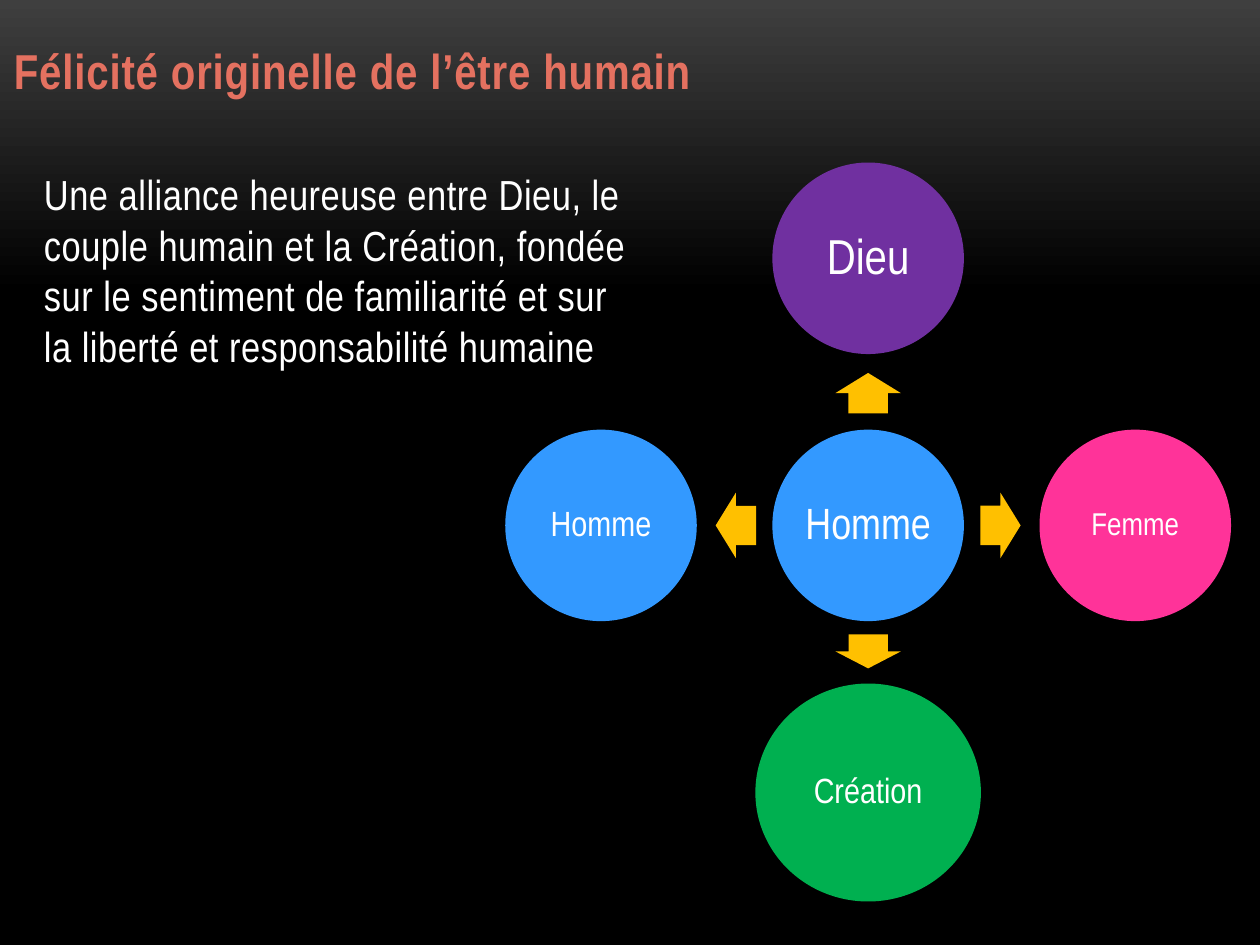
"""Build the slide on the original happiness of the human being."""
from pptx import Presentation
from pptx.dml.color import RGBColor
from pptx.enum.shapes import MSO_SHAPE as SHAPE
from pptx.enum.text import MSO_ANCHOR as ANCHOR, MSO_AUTO_SIZE as AUTO_SIZE, PP_ALIGN as ALIGN
from pptx.util import Inches, Pt

COLORS = {
    "top": "3F3F3F", "black": "000000", "white": "FFFFFF", "title": "E47160",
    "man": "3399FF", "woman": "FF3399", "god": "7030A0", "creation": "00B050",
    "arrow": "FFC000",
}
CENTER_X, CENTER_Y, PITCH = 6.89, 4.17, 2.12


def style_text(paragraph, size, color, spacing=0, bold=False):
    """Format every run of a paragraph."""
    for span in paragraph.runs:
        span.font.name = "Arial Narrow"
        span.font.size = Pt(size)
        span.font.bold = bold
        span.font.color.rgb = RGBColor.from_string(COLORS[color])
        if spacing:
            span._r.get_or_add_rPr().set("spc", str(spacing))


def add_centered(kind, x, y, width, height, color):
    """Add a plain filled shape around a centre point."""
    shape = page.shapes.add_shape(kind, Inches(x - width / 2), Inches(y - height / 2),
                                  Inches(width), Inches(height))
    shape.shadow.inherit = False
    shape.fill.solid()
    shape.fill.fore_color.rgb = RGBColor.from_string(COLORS[color])
    shape.line.fill.background()
    return shape


deck = Presentation()
deck.slide_width, deck.slide_height = Inches(10), Inches(7.5)
page = deck.slides.add_slide(deck.slide_layouts[5])

backdrop = page.background.fill
backdrop.gradient()
backdrop.gradient_angle = 270
for stop, (position, color) in zip(backdrop.gradient_stops, [(0, "top"), (0.31, "black")]):
    stop.position = position
    stop.color.rgb = RGBColor.from_string(COLORS[color])

title = page.shapes.title
title.left, title.top = Inches(0.01), Inches(-0.06)
title.width, title.height = Inches(9.99), Inches(0.9)
title.text_frame.text = "Félicité originelle de l’être humain"
title.text_frame.auto_size = AUTO_SIZE.NONE
title.text_frame.vertical_anchor = ANCHOR.BOTTOM
title.text_frame.paragraphs[0].alignment = ALIGN.LEFT
style_text(title.text_frame.paragraphs[0], 28, "title", 50, True)

box = page.shapes.add_textbox(Inches(0.25), Inches(1.33), Inches(4.92), Inches(1.92))
frame = box.text_frame
frame.word_wrap = True
frame.margin_top = Inches(0.01)
frame.text = ("Une alliance heureuse entre Dieu, le couple humain et la Création, "
              "fondée sur le sentiment de familiarité et sur la liberté et "
              "responsabilité humaine")
frame.paragraphs[0].space_after = Pt(6)
style_text(frame.paragraphs[0], 24, "white", 30)

circles = [
    ("Homme", 0, 0, 1.52, 1.52, 25, "man"),
    ("Dieu", 0, -1, 1.52, 1.52, 28, "god"),
    ("Femme", 1, 0, 1.52, 1.52, 18, "woman"),
    ("Création", 0, 1, 1.79, 1.73, 20, "creation"),
    ("Homme", -1, 0, 1.52, 1.52, 20, "man"),
]
for label, column, row, width, height, size, color in circles:
    circle = add_centered(SHAPE.OVAL, CENTER_X + column * PITCH, CENTER_Y + row * PITCH,
                          width, height, color)
    frame = circle.text_frame
    frame.margin_left = frame.margin_right = Inches(0.03)
    frame.margin_top = frame.margin_bottom = Inches(0.03)
    frame.word_wrap = False
    frame.vertical_anchor = ANCHOR.MIDDLE
    frame.text = label
    frame.paragraphs[0].alignment = ALIGN.CENTER
    frame.paragraphs[0].line_spacing = 0.9
    style_text(frame.paragraphs[0], size, "white")

arrows = [(0, -1.05, 0.32, 270), (1.05, 0, 0.32, 0), (0, 1, 0.27, 90), (-1.05, 0, 0.32, 180)]
for shift_x, shift_y, length, angle in arrows:
    arrow = add_centered(SHAPE.RIGHT_ARROW, CENTER_X + shift_x, CENTER_Y + shift_y,
                         length, 0.52, "arrow")
    arrow.adjustments[0], arrow.adjustments[1] = 0.6, 0.5
    arrow.rotation = angle

deck.save("out.pptx")
